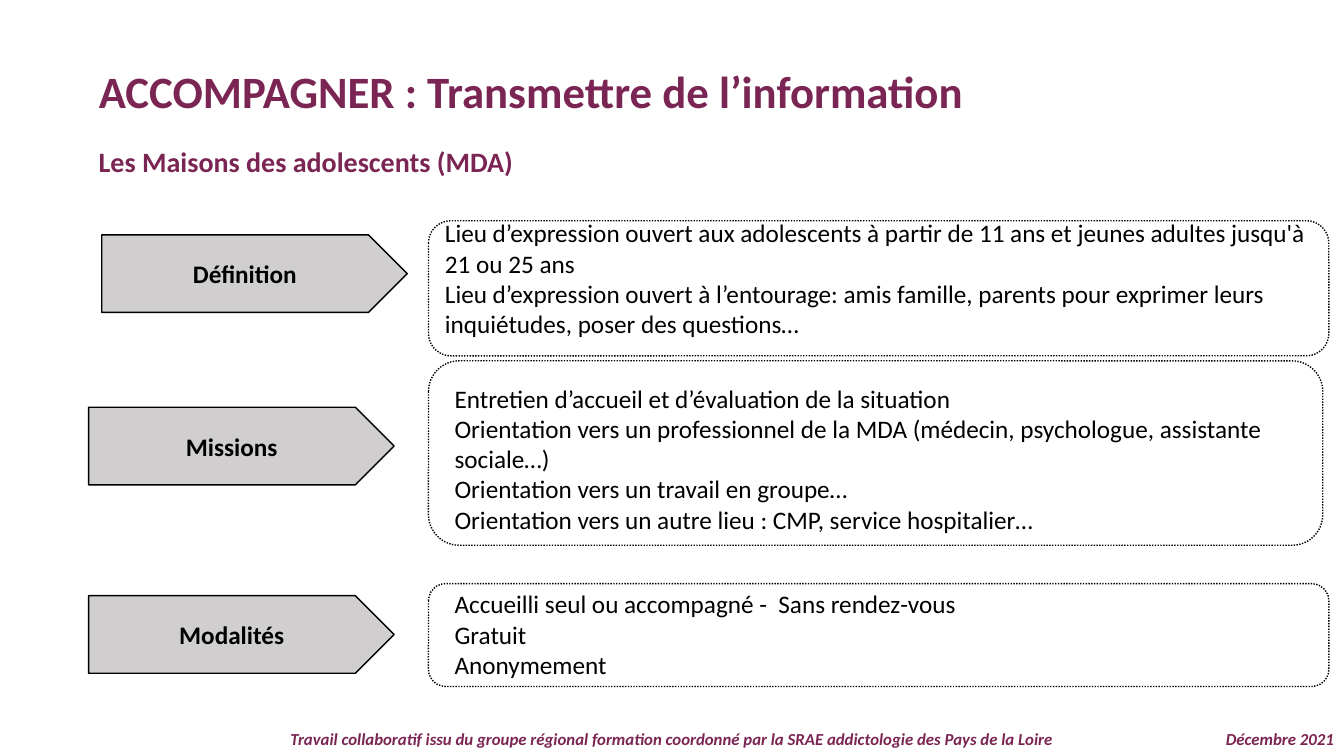
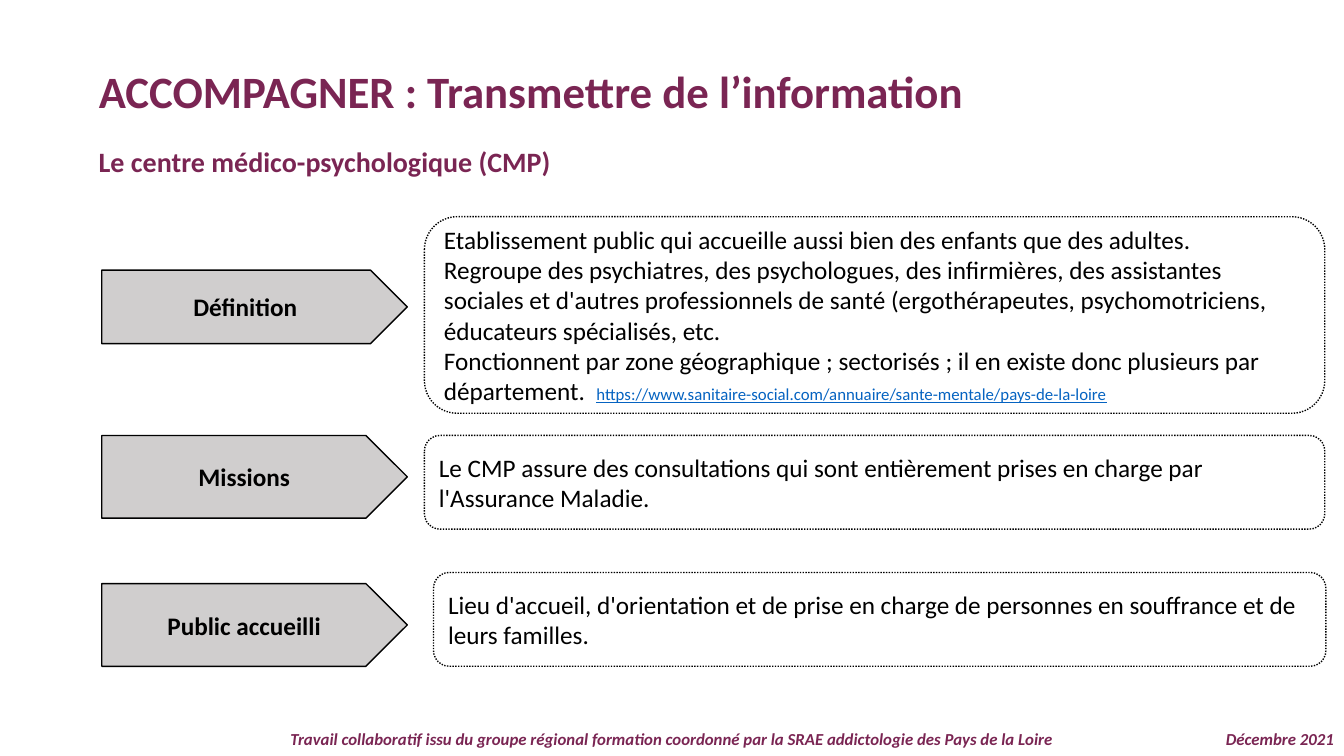
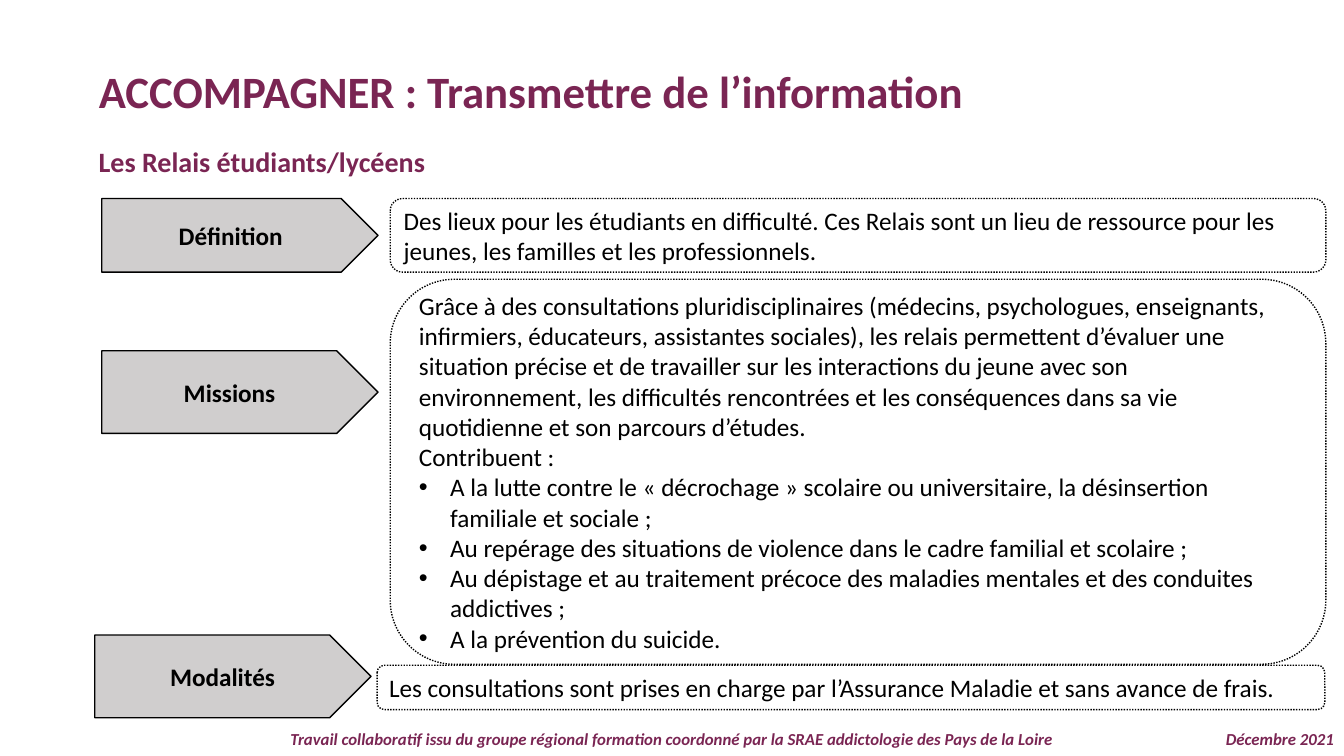
from pptx import Presentation
from pptx.dml.color import RGBColor
from pptx.enum.dml import MSO_LINE
from pptx.enum.shapes import MSO_SHAPE
from pptx.enum.text import MSO_ANCHOR, PP_ALIGN
from pptx.oxml.ns import qn
from pptx.util import Inches, Pt
from lxml import etree

PLATE, ROUND = MSO_SHAPE.PENTAGON, MSO_SHAPE.ROUNDED_RECTANGLE
TOP, MIDDLE = MSO_ANCHOR.TOP, MSO_ANCHOR.MIDDLE
LEFT, CENTER, RIGHT = PP_ALIGN.LEFT, PP_ALIGN.CENTER, PP_ALIGN.RIGHT
DOTS = MSO_LINE.ROUND_DOT
FONT = "Calibri"
PLUM, GREY, BLACK, BLUE = "7A2553", "D0CECE", "000000", "0563C1"
TITLE = "ACCOMPAGNER : Transmettre de l’information"
CREDIT = ("Travail collaboratif issu du groupe régional formation coordonné "
          "par la SRAE addictologie des Pays de la Loire")
DATE = "Décembre 2021"
LINK = "https://www.sanitaire-social.com/annuaire/sante-mentale/pays-de-la-loire"
BULLET = "• "


def hue(code):
    return RGBColor.from_string(code)


def write(frame, lines, size=18, color=BLACK, bold=False, italic=False,
          align=LEFT, anchor=TOP, space=1.0):
    frame.word_wrap = True
    frame.vertical_anchor = anchor
    for i, line in enumerate(lines):
        para = frame.paragraphs[0] if i == 0 else frame.add_paragraph()
        para.alignment = align
        para.line_spacing = space
        if line.startswith(BULLET):
            props = para._p.get_or_add_pPr()
            props.set("marL", str(Inches(0.31)))
            props.set("indent", str(Inches(-0.31)))
            etree.SubElement(props, qn("a:buFont")).set("typeface", "Arial")
            etree.SubElement(props, qn("a:buChar")).set("char", BULLET.strip())
        text, mark, tail = line.removeprefix(BULLET).partition(LINK)
        for part in (text, mark):
            if part:
                run = para.add_run()
                run.text = part
                font = run.font
                font.name, font.bold, font.italic = FONT, bold, italic
                font.size = Pt(12 if part == LINK else size)
                font.color.rgb = hue(BLUE if part == LINK else color)
                if part == LINK:
                    font.underline = True


slides = [
    {
        "topic": "Les Maisons des adolescents (MDA)",
        "plates": [
            ("Définition", (1.01, 2.33, 3.03, 0.77)),
            ("Missions", (0.88, 4.04, 3.03, 0.77)),
            ("Modalités", (0.88, 5.91, 3.03, 0.77)),
        ],
        "panels": [
            ((4.25, 2.19, 8.93, 1.34), 0.25, [
                "Lieu d’expression ouvert aux adolescents à partir de 11 ans "
                "et jeunes adultes jusqu'à 21 ou 25 ans",
                "Lieu d’expression ouvert à l’entourage: amis famille, parents "
                "pour exprimer leurs inquiétudes, poser des questions…",
            ]),
            ((4.25, 3.58, 8.87, 1.83), 0.05, []),
            ((4.25, 5.79, 8.93, 1.02), 0.05, []),
        ],
        "notes": [
            ((4.41, 3.75, 8.78, 1.62), [
                "Entretien d’accueil et d’évaluation de la situation",
                "Orientation vers un professionnel de la MDA (médecin, "
                "psychologue, assistante sociale…)",
                "Orientation vers un travail en groupe…",
                "Orientation vers un autre lieu : CMP, service hospitalier…",
            ]),
            ((4.41, 5.79, 5.45, 1.01), [
                "Accueilli seul ou accompagné -  Sans rendez-vous",
                "Gratuit",
                "Anonymement",
            ]),
        ],
    },
    {
        "topic": "Le centre médico-psychologique (CMP)",
        "plates": [
            ("Définition", (1.01, 2.68, 3.03, 0.73)),
            ("Missions", (1.01, 4.32, 3.03, 0.82)),
            ("Public accueilli", (1.01, 5.79, 3.03, 0.82)),
        ],
        "panels": [
            ((4.21, 2.15, 8.93, 1.95), 0.05, [
                "Etablissement public qui accueille aussi bien des enfants que "
                "des adultes.",
                "Regroupe des psychiatres, des psychologues, des infirmières, "
                "des assistantes sociales et d'autres professionnels de santé "
                "(ergothérapeutes, psychomotriciens, éducateurs spécialisés, etc.",
                "Fonctionnent par zone géographique ; sectorisés ; il en existe "
                "donc plusieurs par département.  " + LINK,
            ]),
            ((4.21, 4.32, 8.93, 0.93), 0.05, [
                "Le CMP assure des consultations qui sont entièrement prises en "
                "charge par l'Assurance Maladie.",
            ]),
            ((4.3, 5.68, 8.85, 0.93), 0.05, [
                "Lieu d'accueil, d'orientation et de prise en charge de "
                "personnes en souffrance et de leurs familles.",
            ]),
        ],
        "notes": [],
    },
    {
        "topic": "Les Relais étudiants/lycéens",
        "plates": [
            ("Définition", (1.01, 1.97, 2.74, 0.73)),
            ("Missions", (1.01, 3.48, 2.74, 0.82)),
            ("Modalités", (0.94, 6.3, 2.74, 0.82)),
        ],
        "panels": [
            ((3.87, 1.97, 9.28, 0.73), 0.05, [
                "Des lieux pour les étudiants en difficulté. Ces Relais sont un "
                "lieu de ressource pour les jeunes, les familles et les "
                "professionnels.",
            ]),
            ((3.87, 2.77, 9.28, 3.82), 0.05, [
                "Grâce à des consultations pluridisciplinaires (médecins, "
                "psychologues, enseignants, infirmiers, éducateurs, assistantes "
                "sociales), les relais permettent d’évaluer une situation "
                "précise et de travailler sur les interactions du jeune avec "
                "son environnement, les difficultés rencontrées et les "
                "conséquences dans sa vie quotidienne et son parcours d’études.",
                "Contribuent :",
                "• A la lutte contre le « décrochage » scolaire ou "
                "universitaire, la désinsertion familiale et sociale ;",
                "• Au repérage des situations de violence dans le cadre "
                "familial et scolaire ;",
                "• Au dépistage et au traitement précoce des maladies mentales "
                "et des conduites addictives ;",
                "• A la prévention du suicide.",
            ]),
            ((3.74, 6.6, 9.4, 0.44), 0.05, [
                "Les consultations sont prises en charge par l’Assurance "
                "Maladie et sans avance de frais.",
            ]),
        ],
        "notes": [],
    },
]

deck = Presentation()
deck.slide_width, deck.slide_height = Inches(13.33), Inches(7.5)

for data in slides:
    slide = deck.slides.add_slide(deck.slide_layouts[5])
    shapes = slide.shapes

    title = shapes.title
    title.left, title.top = Inches(0.88), Inches(0.58)
    title.width, title.height = Inches(9.92), Inches(0.64)
    write(title.text_frame, [TITLE], 32, PLUM, bold=True)

    topic = shapes.add_textbox(*map(Inches, (0.88, 1.38, 6.67, 0.44)))
    write(topic.text_frame, [data["topic"]], 20, PLUM, bold=True)

    for at, text, align in (((0, 7.2, 13.33, 0.3), CREDIT, CENTER),
                            ((11.95, 7.2, 1.38, 0.3), DATE, RIGHT)):
        foot = shapes.add_textbox(*map(Inches, at))
        write(foot.text_frame, [text], 12, PLUM, bold=True, italic=True,
              align=align, space=0.9)

    for label, at in data["plates"]:
        plate = shapes.add_shape(PLATE, *map(Inches, at))
        plate.shadow.inherit = False
        plate.fill.solid()
        plate.fill.fore_color.rgb = hue(GREY)
        plate.line.color.rgb = hue(BLACK)
        plate.line.width = Pt(1)
        write(plate.text_frame, [label], bold=True, align=CENTER, anchor=MIDDLE)

    for at, inset, lines in data["panels"]:
        panel = shapes.add_shape(ROUND, *map(Inches, at))
        panel.shadow.inherit = False
        panel.fill.background()
        panel.line.color.rgb = hue(BLACK)
        panel.line.width = Pt(1)
        panel.line.dash_style = DOTS
        panel.text_frame.margin_bottom = Inches(inset)
        write(panel.text_frame, lines, anchor=MIDDLE)

    for at, lines in data["notes"]:
        note = shapes.add_textbox(*map(Inches, at))
        write(note.text_frame, lines)

deck.save("out.pptx")
